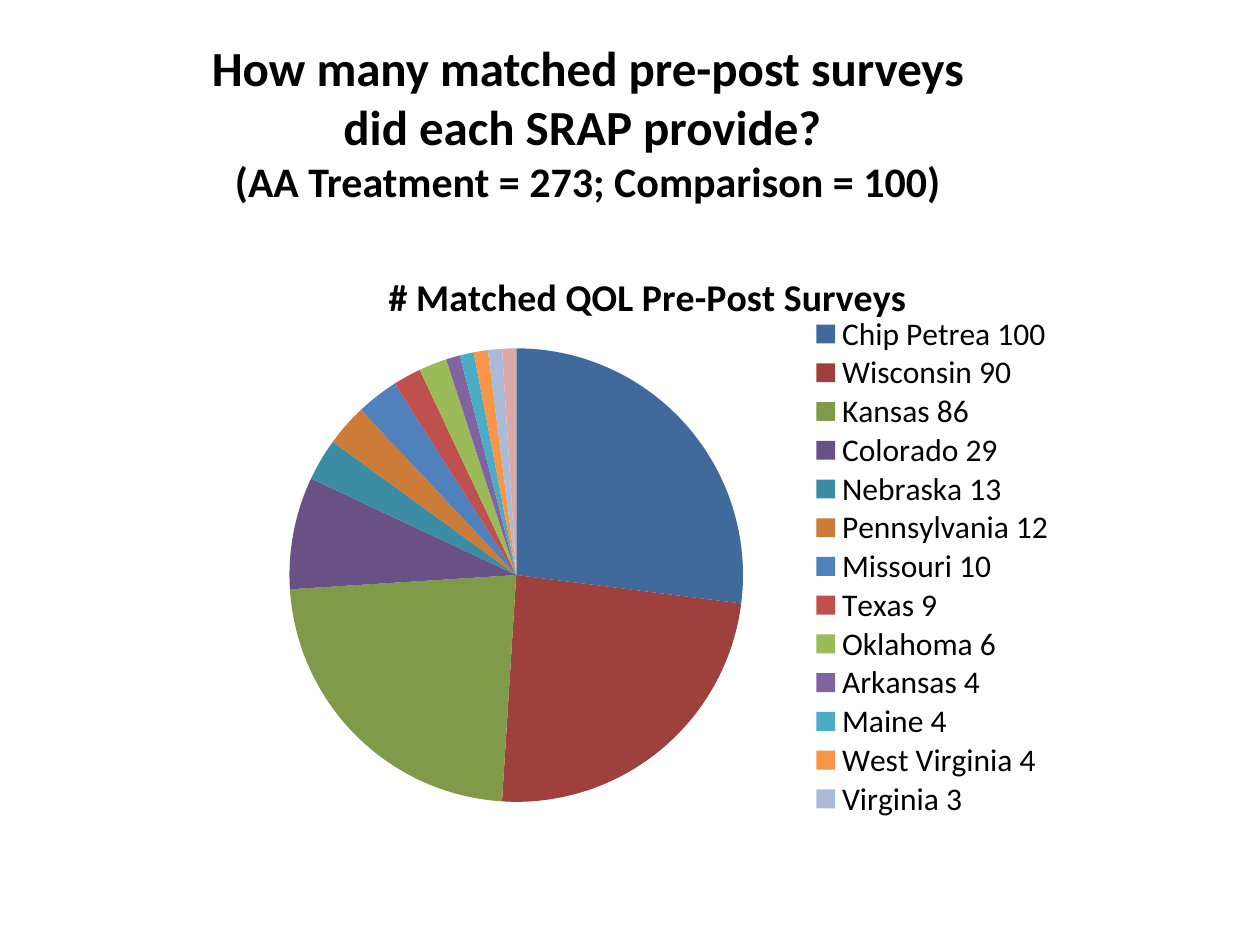
from lxml import etree
from pptx import Presentation
from pptx.chart.data import CategoryChartData
from pptx.dml.color import RGBColor
from pptx.enum.chart import XL_CHART_TYPE, XL_LEGEND_POSITION
from pptx.enum.text import MSO_ANCHOR, MSO_AUTO_SIZE, PP_ALIGN
from pptx.oxml import parse_xml
from pptx.oxml.ns import nsdecls, qn
from pptx.util import Inches, Pt

PIE = XL_CHART_TYPE.PIE
RIGHT = XL_LEGEND_POSITION.RIGHT
TOP = MSO_ANCHOR.TOP
NO_AUTOFIT = MSO_AUTO_SIZE.NONE
CENTER = PP_ALIGN.CENTER

FONT = "Calibri"
BLACK = "000000"
CHART_TITLE = "# Matched QOL Pre-Post Surveys"
SURVEYS = {
    "Chip Petrea": 100, "Wisconsin": 90, "Kansas": 86, "Colorado": 29,
    "Nebraska": 13, "Pennsylvania": 12, "Missouri": 10, "Texas": 9,
    "Oklahoma": 6, "Arkansas": 4, "Maine": 4, "West Virginia": 4,
    "Virginia": 3, "North Carolina": 2, "Georgia": 1,
}
LEGEND_ROWS = 13
SLICE_COLORS = [
    "40699C", "9E413E", "7F9A48", "695185", "3C8DA3", "CC7B38",
    "4F81BD", "C0504D", "9BBB59", "8064A2", "4BACC6", "F79646",
    "AABAD7", "D9AAA9", "C6D6AC",
]


def rgb(color):
    return RGBColor.from_string(color)


def format_font(font, size, bold=False, color=BLACK):
    font.name = FONT
    font.size = Pt(size)
    font.bold = bold
    font.color.rgb = rgb(color)


def add_text(paragraph, text, **style):
    run = paragraph.add_run()
    run.text = text
    format_font(run.font, **style)


def add_break(paragraph, size):
    paragraph.add_line_break()
    line_break = paragraph._p.findall(qn("a:br"))[-1]
    etree.SubElement(line_break, qn("a:rPr")).set("sz", str(size * 100))


def build_heading(heading, left, top, width, height):
    heading.left, heading.top = left, top
    heading.width, heading.height = width, height
    frame = heading.text_frame
    frame.word_wrap = True
    frame.auto_size = NO_AUTOFIT
    frame.vertical_anchor = TOP
    paragraph = frame.paragraphs[0]
    paragraph.alignment = CENTER
    add_text(paragraph, "How many matched pre-post surveys did each SRAP provide? ",
             size=28, bold=True)
    add_break(paragraph, 28)
    add_text(paragraph, "(AA Treatment = 273; Comparison = 100)", size=24, bold=True)


def chart_layout(target="", **fractions):
    inner = f'<c:layoutTarget val="{target}"/>' if target else ""
    modes = "".join(f'<c:{axis}Mode val="edge"/>' for axis in "xy")
    sizes = "".join(f'<c:{key} val="{value}"/>' for key, value in fractions.items())
    return parse_xml(f'<c:layout {nsdecls("c")}><c:manualLayout>{inner}{modes}{sizes}'
                     '</c:manualLayout></c:layout>')


def place(part, before, layout):
    for old in part.findall(qn("c:layout")):
        part.remove(old)
    part.find(qn(before)).addprevious(layout)


def hide_legend_rows(legend, rows):
    position = legend.find(qn("c:legendPos"))
    for row in reversed(rows):
        position.addnext(parse_xml(
            f'<c:legendEntry {nsdecls("c")}><c:idx val="{row}"/>'
            '<c:delete val="1"/></c:legendEntry>'))


def build_survey_pie(slide, left, top, width, height):
    total = sum(SURVEYS.values())
    shares = CategoryChartData()
    shares.categories = [f"{state} {count}" for state, count in SURVEYS.items()]
    shares.add_series(CHART_TITLE,
                      [round(100 * count / total) for count in SURVEYS.values()])
    chart = slide.shapes.add_chart(PIE, left, top, width, height, shares).chart
    format_font(chart.font, size=18)

    chart.has_title = True
    add_text(chart.chart_title.text_frame.paragraphs[0], CHART_TITLE, size=21.6, bold=True)
    chart.has_legend = True
    chart.legend.position = RIGHT
    chart.legend.include_in_layout = False
    format_font(chart.legend.font, size=18)

    pie = chart.plots[0]
    pie.vary_by_categories = True
    for index, color in enumerate(SLICE_COLORS):
        slice_format = pie.series[0].points[index].format
        slice_format.fill.solid()
        slice_format.fill.fore_color.rgb = rgb(color)
        slice_format.line.fill.background()

    legend = chart.legend._element
    hide_legend_rows(legend, range(LEGEND_ROWS, len(SURVEYS)))
    place(chart.chart_title._element, "c:overlay", chart_layout(x=0.18, y=0.02))
    place(legend, "c:overlay", chart_layout(x=0.69, y=0.11, w=0.29, h=0.89))
    place(chart._chartSpace.chart.plotArea, "c:pieChart",
          chart_layout("inner", x=0.07, y=0.17, w=0.54, h=0.8))


def main():
    deck = Presentation()
    deck.slide_width, deck.slide_height = Inches(10), Inches(7.5)
    slide = deck.slides.add_slide(deck.slide_layouts[5])
    build_heading(slide.shapes.title, Inches(1.33), Inches(0.25), Inches(6.67), Inches(1.25))
    build_survey_pie(slide, Inches(1.83), Inches(2), Inches(6.67), Inches(4.5))
    deck.save("out.pptx")


if __name__ == "__main__":
    main()
